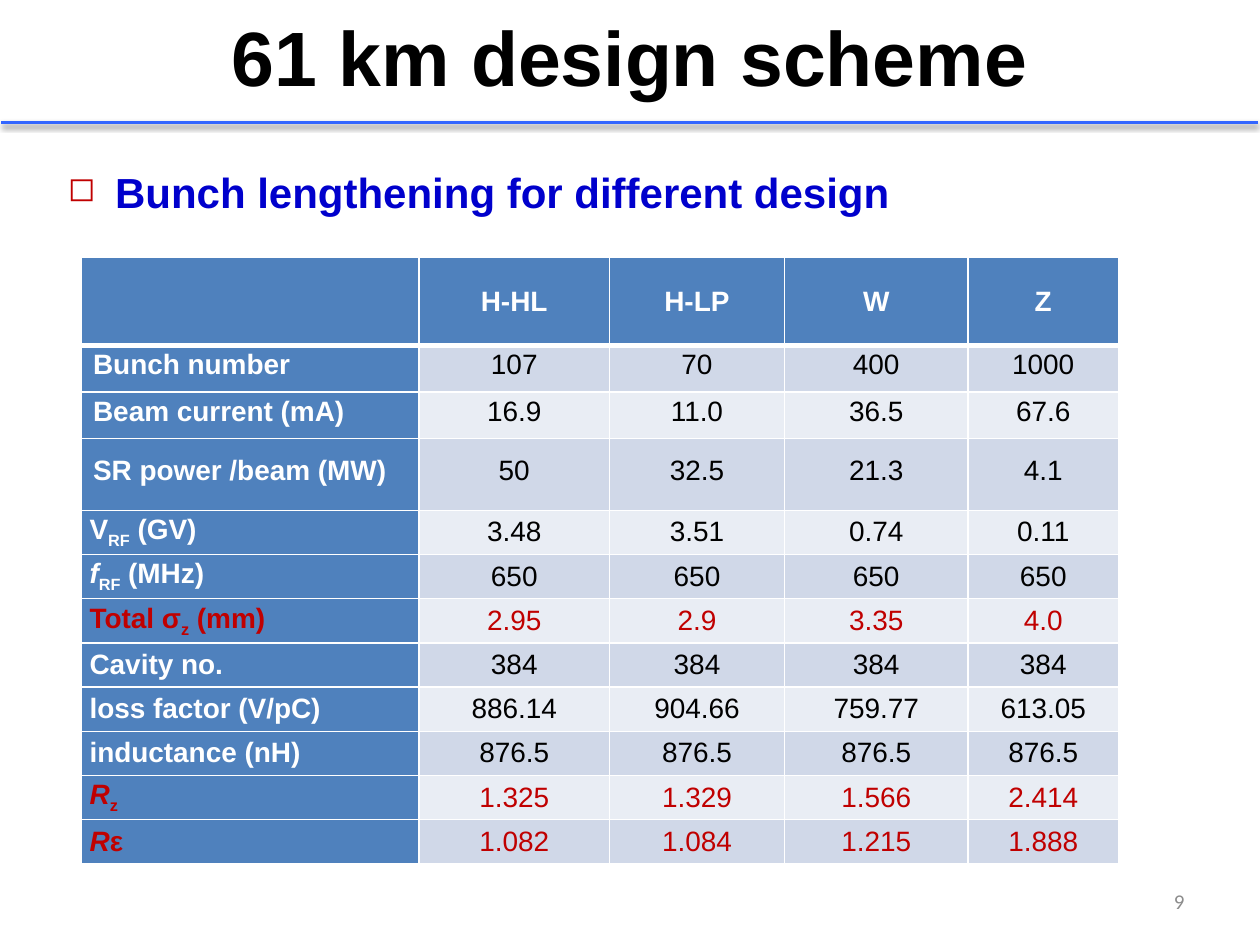
from dataclasses import dataclass
from typing import NamedTuple

from lxml.etree import SubElement
from pptx import Presentation
from pptx.dml.color import RGBColor as Rgb
from pptx.enum.shapes import MSO_CONNECTOR as Link
from pptx.enum.text import MSO_ANCHOR as Anchor, MSO_AUTO_SIZE as Fit, PP_ALIGN as Align
from pptx.oxml.ns import qn
from pptx.util import Pt


@dataclass(frozen=True)
class Theme:
    face: str = "Arial"
    page_face: str = "Calibri"
    black: str = "000000"
    white: str = "FFFFFF"
    red: str = "C00000"
    blue: str = "0000CC"
    rule: str = "3366FF"
    gray: str = "8C8C8C"
    head: str = "4F81BD"
    bands: tuple = ("D0D8E8", "E9EDF4")
    title_size: float = 44
    point_size: float = 24
    cell_size: float = 16
    page_size: float = 12


class Bit(NamedTuple):
    """A piece of a label; low marks a subscript."""
    text: str
    slant: bool = False
    low: bool = False


class Row(NamedTuple):
    label: tuple
    values: str
    high: float = 25.27
    tight: bool = False
    key: bool = False


THEME = Theme()
HEADS = ("H-HL", "H-LP", "W", "Z")
HEAD_HIGH = 50.4
WIDTHS = (193.3, 108.7, 100.2, 104.7, 86.2)
RF = Bit("RF", low=True)
SUB_Z = Bit("z", low=True)
ROWS = (
    Row((Bit("Bunch number"),), "107 70 400 1000", 26.4, tight=True),
    Row((Bit("Beam current (mA)"),), "16.9 11.0 36.5 67.6", 26.6, tight=True),
    Row((Bit("SR power /beam (MW)"),), "50 32.5 21.3 4.1", 41, tight=True),
    Row((Bit("V"), RF, Bit(" (GV)")), "3.48 3.51 0.74 0.11"),
    Row((Bit("f", slant=True), RF, Bit(" (MHz)")), "650 650 650 650"),
    Row((Bit("Total σ"), SUB_Z, Bit(" (mm)")), "2.95 2.9 3.35 4.0", key=True),
    Row((Bit("Cavity no."),), "384 384 384 384"),
    Row((Bit("loss factor (V/pC)"),), "886.14 904.66 759.77 613.05"),
    Row((Bit("inductance (nH)"),), "876.5 876.5 876.5 876.5"),
    Row((Bit("R", slant=True), SUB_Z), "1.325 1.329 1.566 2.414", key=True),
    Row((Bit("R", slant=True), Bit("ε")), "1.082 1.084 1.215 1.888", key=True),
)


def set_font(font, size: float, color: str, bold: bool, face: str = THEME.face) -> None:
    font.name, font.size, font.bold = face, Pt(size), bold
    font.color.rgb = Rgb.from_string(color)


def add_title(slide, text: str) -> None:
    title = slide.shapes.title
    title.left, title.top, title.width, title.height = Pt(0), Pt(-2.2), Pt(720), Pt(67.7)
    frame = title.text_frame
    frame.text, frame.auto_size, frame.vertical_anchor = text, Fit.NONE, Anchor.MIDDLE
    para = frame.paragraphs[0]
    para.alignment = Align.CENTER
    set_font(para.font, THEME.title_size, THEME.black, True)


def add_rule(slide) -> None:
    """Draw the line under the title with its soft shadow."""
    rule = slide.shapes.add_connector(Link.STRAIGHT, Pt(0.7), Pt(70), Pt(718.6), Pt(70))
    rule.line.color.rgb = Rgb.from_string(THEME.rule)
    rule.line.width = Pt(2)
    effects = SubElement(rule._element.spPr, qn("a:effectLst"))
    shade = SubElement(effects, qn("a:outerShdw"), blurRad=str(Pt(3.1)),
                       dist=str(Pt(1.6)), dir="5400000", rotWithShape="0")
    color = SubElement(shade, qn("a:srgbClr"), val=THEME.black)
    SubElement(color, qn("a:alpha"), val="38000")


def add_text(slide, text: str, left: float, top: float, wide: float, high: float):
    box = slide.shapes.add_textbox(Pt(left), Pt(top), Pt(wide), Pt(high))
    frame = box.text_frame
    frame.word_wrap, frame.text = True, text
    return frame, frame.paragraphs[0]


def add_point(slide, text: str) -> None:
    _, para = add_text(slide, text, 31.7, 77, 652.3, 45.4)
    para.line_spacing = 1.5
    set_font(para.font, THEME.point_size, THEME.blue, True)
    props = para._p.get_or_add_pPr()
    props.set("marL", str(Pt(27)))
    props.set("indent", str(Pt(-27)))
    # Bullet parts must come after the spacing and before the font.
    marks = SubElement(props, qn("a:buClr")), SubElement(props, qn("a:buSzPct"), val="80000"), \
        SubElement(props, qn("a:buChar"), char="◻")
    SubElement(marks[0], qn("a:srgbClr"), val=THEME.red)
    props.append(props.find(qn("a:defRPr")))


def add_page(slide, text: str) -> None:
    frame, para = add_text(slide, text, 516.2, 500.4, 167.8, 28.8)
    frame.vertical_anchor = Anchor.MIDDLE
    para.alignment = Align.RIGHT
    set_font(para.font, THEME.page_size, THEME.gray, False, THEME.page_face)


def style_cell(cell, fill: str, top: float = 1, base: float = 1) -> None:
    """Set the borders, then the fill, as the schema orders them."""
    props = cell._tc.get_or_add_tcPr()
    for side, width in (("L", 1), ("R", 1), ("T", top), ("B", base)):
        edge = SubElement(props, qn(f"a:ln{side}"), w=str(Pt(width)))
        paint = SubElement(edge, qn("a:solidFill"))
        SubElement(paint, qn("a:srgbClr"), val=THEME.white)
    cell.fill.solid()
    cell.fill.fore_color.rgb = Rgb.from_string(fill)
    cell.margin_left = cell.margin_right = Pt(5)
    cell.margin_top = cell.margin_bottom = Pt(0)
    cell.vertical_anchor = Anchor.MIDDLE


def fill_cell(cell, bits: tuple, color: str, bold: bool, align=Align.CENTER, tight: bool = False):
    """Write the bits as runs, since the table style outranks paragraph fonts."""
    para = cell.text_frame.paragraphs[0]
    para.alignment = align
    if tight:
        para.line_spacing = Pt(13.7)
    for bit in bits:
        run = para.add_run()
        run.text = bit.text
        set_font(run.font, THEME.cell_size, color, bold)
        if bit.slant:
            run.font.italic = True
        if bit.low:
            run._r.get_or_add_rPr().set("baseline", "-25000")
    return para


def add_grid(slide) -> None:
    high = HEAD_HIGH + sum(row.high for row in ROWS)
    table = slide.shapes.add_table(len(ROWS) + 1, len(WIDTHS), Pt(46.2), Pt(147.2),
                                   Pt(sum(WIDTHS)), Pt(high)).table
    table.first_row = table.horz_banding = False
    for col, wide in zip(table.columns, WIDTHS):
        col.width = Pt(wide)
    table.rows[0].height = Pt(HEAD_HIGH)
    for c in range(len(WIDTHS)):
        style_cell(table.cell(0, c), THEME.head, base=3)
    for c, text in enumerate(HEADS, 1):
        fill_cell(table.cell(0, c), (Bit(text),), THEME.white, True)
    for r, row in enumerate(ROWS, 1):
        table.rows[r].height = Pt(row.high)
        top = 3 if r == 1 else 1
        label = table.cell(r, 0)
        style_cell(label, THEME.head, top)
        para = fill_cell(label, row.label, THEME.red if row.key else THEME.white, True,
                         Align.JUSTIFY, row.tight)
        if row.tight:
            para._p.get_or_add_pPr().set("marL", str(Pt(2)))
        for c, text in enumerate(row.values.split(), 1):
            cell = table.cell(r, c)
            style_cell(cell, THEME.bands[(r - 1) % 2], top)
            fill_cell(cell, (Bit(text),), THEME.red if row.key else THEME.black, False,
                      tight=row.tight)


def main() -> None:
    deck = Presentation()
    deck.slide_width, deck.slide_height = Pt(720), Pt(540)
    slide = deck.slides.add_slide(deck.slide_layouts[5])
    add_rule(slide)
    add_title(slide, "61 km design scheme")
    add_page(slide, "9")
    add_grid(slide)
    add_point(slide, "Bunch lengthening for different design")
    deck.save("out.pptx")


if __name__ == "__main__":
    main()
